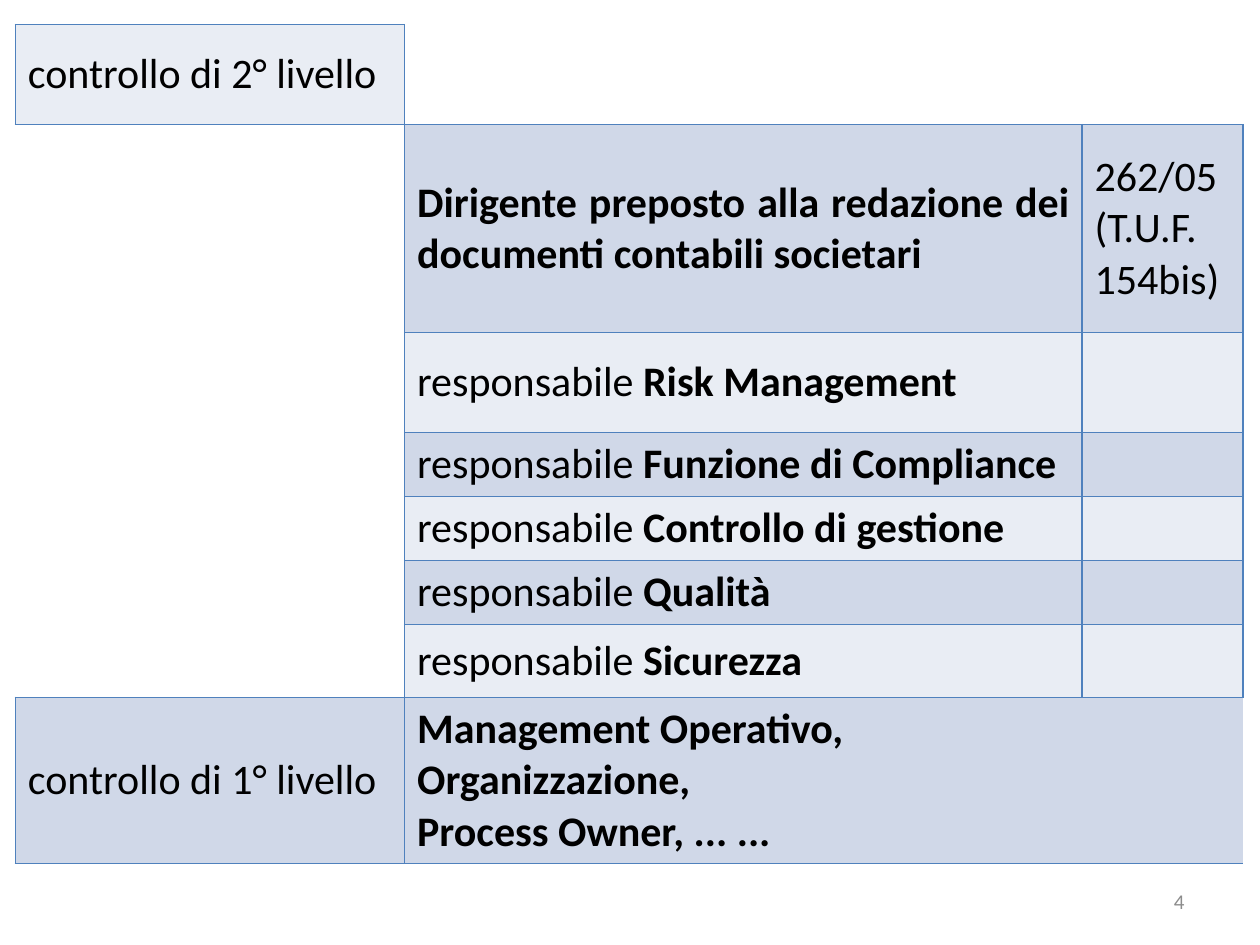
"""Build a slide with a table of first and second level controls."""
from dataclasses import dataclass

from lxml import etree
from pptx import Presentation
from pptx.dml.color import RGBColor
from pptx.enum.text import MSO_ANCHOR, PP_ALIGN
from pptx.oxml.ns import qn
from pptx.util import Pt

MIDDLE = MSO_ANCHOR.MIDDLE
JUSTIFY, RIGHT = PP_ALIGN.JUSTIFY, PP_ALIGN.RIGHT
BLACK = RGBColor(0x00, 0x00, 0x00)
GRAY = RGBColor(0x8C, 0x8C, 0x8C)
LINE = RGBColor(0x4F, 0x81, 0xBD)
LIGHT = RGBColor(0xE9, 0xED, 0xF4)
DARK = RGBColor(0xD0, 0xD8, 0xE8)
BANDS = (LIGHT, DARK)
FONT = "Calibri"
WIDTHS = (222.4, 387.2, 92)
HEIGHTS = (57.2, 118.8, 57.2, 36.6, 36.6, 36.6, 41.6, 95)
ALL_EDGES = "LRTB"
ROLES = ("Risk Management", "Funzione di Compliance", "Controllo di gestione",
         "Qualità", "Sicurezza")


@dataclass(frozen=True)
class Span:
    text: str
    bold: bool = False


@dataclass(frozen=True)
class Block:
    row: int
    column: int
    paragraphs: tuple[tuple[Span, ...], ...] = ()
    rows: int = 1
    columns: int = 1
    fill: RGBColor | None = None
    edges: str = ALL_EDGES


def write(para, text: str, *, size: float = 24, bold: bool = False,
          color: RGBColor = BLACK, align=JUSTIFY) -> None:
    para.alignment = align
    span = para.add_run()
    span.text = text
    font = span.font
    font.name, font.size, font.bold = FONT, Pt(size), bold
    font.color.rgb = color


def set_borders(cell, edges: str) -> None:
    properties = cell._tc.get_or_add_tcPr()
    for edge in ALL_EDGES:
        border = etree.SubElement(properties, qn(f"a:ln{edge}"), w=str(Pt(1)))
        if edge in edges:
            solid = etree.SubElement(border, qn("a:solidFill"))
            etree.SubElement(solid, qn("a:srgbClr"), val=str(LINE))
        else:
            etree.SubElement(border, qn("a:noFill"))


def draw_block(table, block: Block) -> None:
    last_row = block.row + block.rows - 1
    last_column = block.column + block.columns - 1
    for row in range(block.row, last_row + 1):
        for column in range(block.column, last_column + 1):
            outer = {"L": column == block.column, "R": column == last_column,
                     "T": row == block.row, "B": row == last_row}
            cell = table.cell(row, column)
            set_borders(cell, "".join(e for e in block.edges if outer[e]))
            if block.fill is None:
                cell.fill.background()
            else:
                cell.fill.solid()
                cell.fill.fore_color.rgb = block.fill
    origin = table.cell(block.row, block.column)
    if block.rows * block.columns > 1:
        origin.merge(table.cell(last_row, last_column))
    origin.vertical_anchor = MIDDLE
    frame = origin.text_frame
    for index, spans in enumerate(block.paragraphs):
        para = frame.add_paragraph() if index else frame.paragraphs[0]
        for span in spans:
            write(para, span.text, bold=span.bold)


def control_blocks() -> list[Block]:
    head = "Dirigente preposto alla redazione dei documenti contabili societari"
    owners = ("Management Operativo,", "Organizzazione, ", "Process Owner, ... ...")
    blocks = [
        Block(0, 0, ((Span("controllo di 2° livello"),),), fill=LIGHT),
        Block(0, 1, columns=2, edges="LB"),
        Block(1, 0, rows=6, edges="RTB"),
        Block(1, 1, ((Span(head, True),),), fill=DARK),
        Block(1, 2, ((Span("262/05 (T.U.F. 154bis)"),),), fill=DARK),
    ]
    for row, role in enumerate(ROLES, start=2):
        fill = BANDS[row % 2]
        spans = (Span("responsabile "), Span(role, True))
        blocks += [Block(row, 1, (spans,), fill=fill), Block(row, 2, fill=fill)]
    blocks += [
        Block(7, 0, ((Span("controllo di 1° livello"),),), fill=DARK),
        Block(7, 1, tuple((Span(owner, True),) for owner in owners),
              columns=2, fill=DARK),
    ]
    return blocks


def draw_table(page) -> None:
    table = page.shapes.add_table(
        len(HEIGHTS), len(WIDTHS), Pt(8.8), Pt(14),
        Pt(sum(WIDTHS)), Pt(sum(HEIGHTS))).table
    table.first_row = table.horz_banding = False
    for column, width in zip(table.columns, WIDTHS):
        column.width = Pt(width)
    for row, height in zip(table.rows, HEIGHTS):
        row.height = Pt(height)
    for block in control_blocks():
        draw_block(table, block)


def draw_page_number(page) -> None:
    box = page.shapes.add_textbox(Pt(516), Pt(500.5), Pt(168), Pt(28.8))
    frame = box.text_frame
    frame.word_wrap = True
    frame.vertical_anchor = MIDDLE
    write(frame.paragraphs[0], "4", size=12, color=GRAY, align=RIGHT)


def main() -> None:
    deck = Presentation()
    deck.slide_width, deck.slide_height = Pt(720), Pt(540)
    page = deck.slides.add_slide(deck.slide_layouts[6])
    draw_page_number(page)
    draw_table(page)
    deck.save("out.pptx")


if __name__ == "__main__":
    main()
